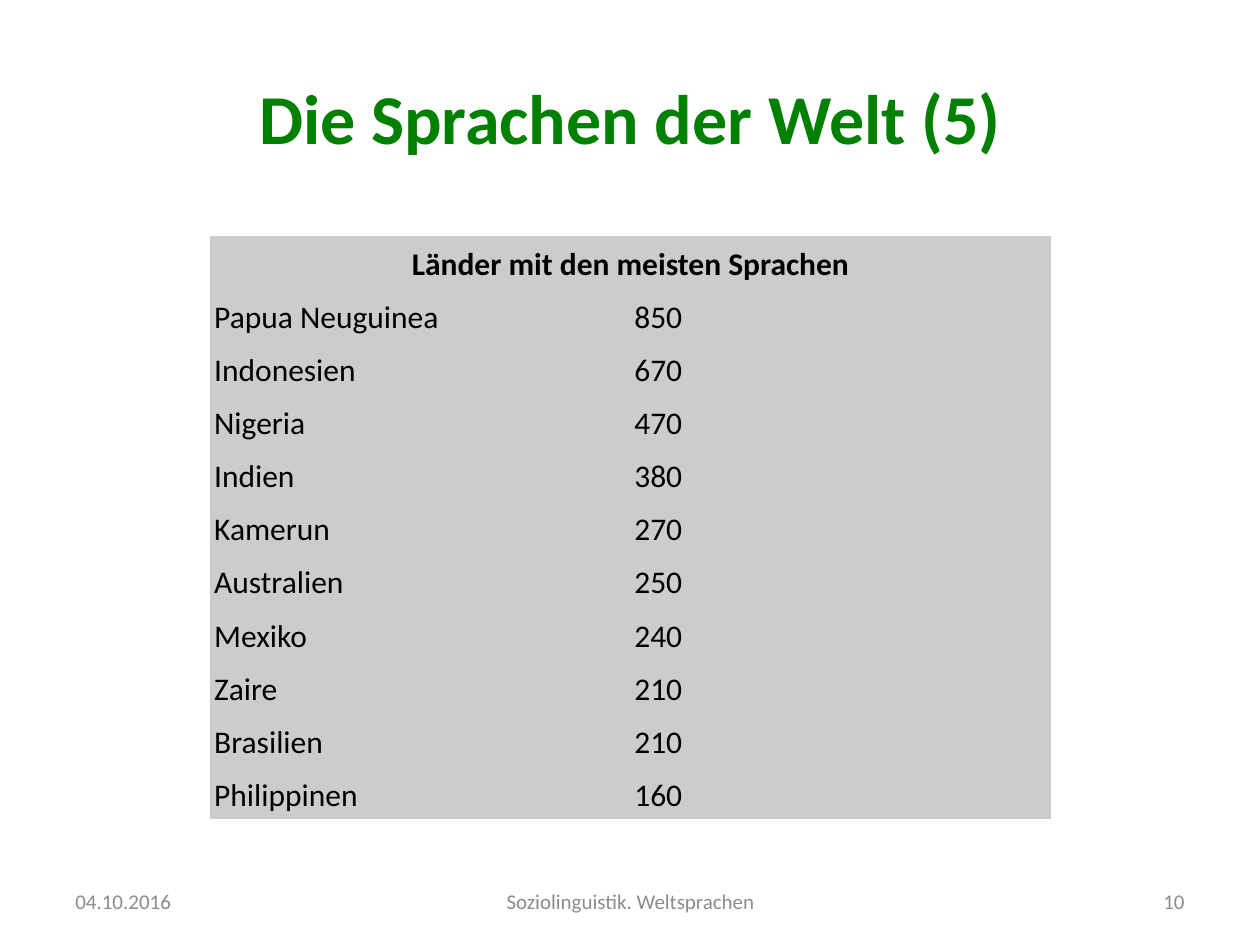
"""Build the slide on the countries with the most languages."""
from pptx import Presentation
from pptx.dml.color import RGBColor
from pptx.enum.text import MSO_ANCHOR, PP_ALIGN
from pptx.oxml.ns import qn
from pptx.util import Inches, Pt

COLORS = {"title": "008000", "footer": "8C8C8C", "text": "000000", "cell": "CCCCCC"}
FONT = "Calibri"
NO_STYLE_NO_GRID = "{2D5ABB26-0587-4C30-8999-92F81FD0307C}"

TITLE = ("Die Sprachen der Welt (5)", (0.5, 0.3, 9, 1.25))
FOOTERS = [
    ("04.10.2016", (0.5, 6.95, 2.33, 0.4), PP_ALIGN.LEFT),
    ("Soziolinguistik. Weltsprachen", (3.42, 6.95, 3.17, 0.4), PP_ALIGN.CENTER),
    ("10", (7.17, 6.95, 2.33, 0.4), PP_ALIGN.RIGHT),
]
TABLE_HEADING = "Länder mit den meisten Sprachen"
COUNTRIES = [
    ("Papua Neuguinea", 850),
    ("Indonesien", 670),
    ("Nigeria", 470),
    ("Indien", 380),
    ("Kamerun", 270),
    ("Australien", 250),
    ("Mexiko", 240),
    ("Zaire", 210),
    ("Brasilien", 210),
    ("Philippinen", 160),
]
TABLE_BOX = (1.67, 1.87, 6.67, 4.63)
CELL_INSET = 0.03


def style_paragraph(p, text, size, color, align, bold=False):
    p.text = text
    p.alignment = align
    p.font.name = FONT
    p.font.size = Pt(size)
    p.font.bold = bold
    p.font.color.rgb = RGBColor.from_string(COLORS[color])


def add_text(s, text, box, size, color, align, bold=False):
    tf = s.shapes.add_textbox(*map(Inches, box)).text_frame
    tf.word_wrap = True
    tf.vertical_anchor = MSO_ANCHOR.MIDDLE
    style_paragraph(tf.paragraphs[0], text, size, color, align, bold)


def fill_cell(cell, text, align, bold=False):
    cell.fill.solid()
    cell.fill.fore_color.rgb = RGBColor.from_string(COLORS["cell"])
    cell.vertical_anchor = MSO_ANCHOR.MIDDLE
    cell.margin_left = cell.margin_right = Inches(CELL_INSET)
    cell.margin_top = cell.margin_bottom = Inches(CELL_INSET)
    p = cell.text_frame.paragraphs[0]
    style_paragraph(p, text, 18, "text", align, bold)
    p.line_spacing = 1.15


def add_country_table(s):
    frame = s.shapes.add_table(len(COUNTRIES) + 1, 2, *map(Inches, TABLE_BOX))
    for style in frame.element.iter(qn("a:tableStyleId")):
        style.text = NO_STYLE_NO_GRID
    table = frame.table
    table.cell(0, 0).merge(table.cell(0, 1))
    fill_cell(table.cell(0, 0), TABLE_HEADING, PP_ALIGN.CENTER, bold=True)
    for row, values in enumerate(COUNTRIES, 1):
        for col, value in enumerate(values):
            fill_cell(table.cell(row, col), str(value), PP_ALIGN.JUSTIFY)


def main():
    prs = Presentation()
    prs.slide_width, prs.slide_height = Inches(10), Inches(7.5)
    s = prs.slides.add_slide(prs.slide_layouts[6])
    add_text(s, *TITLE, 40, "title", PP_ALIGN.CENTER, bold=True)
    for text, box, align in FOOTERS:
        add_text(s, text, box, 12, "footer", align)
    add_country_table(s)
    prs.save("out.pptx")


if __name__ == "__main__":
    main()
